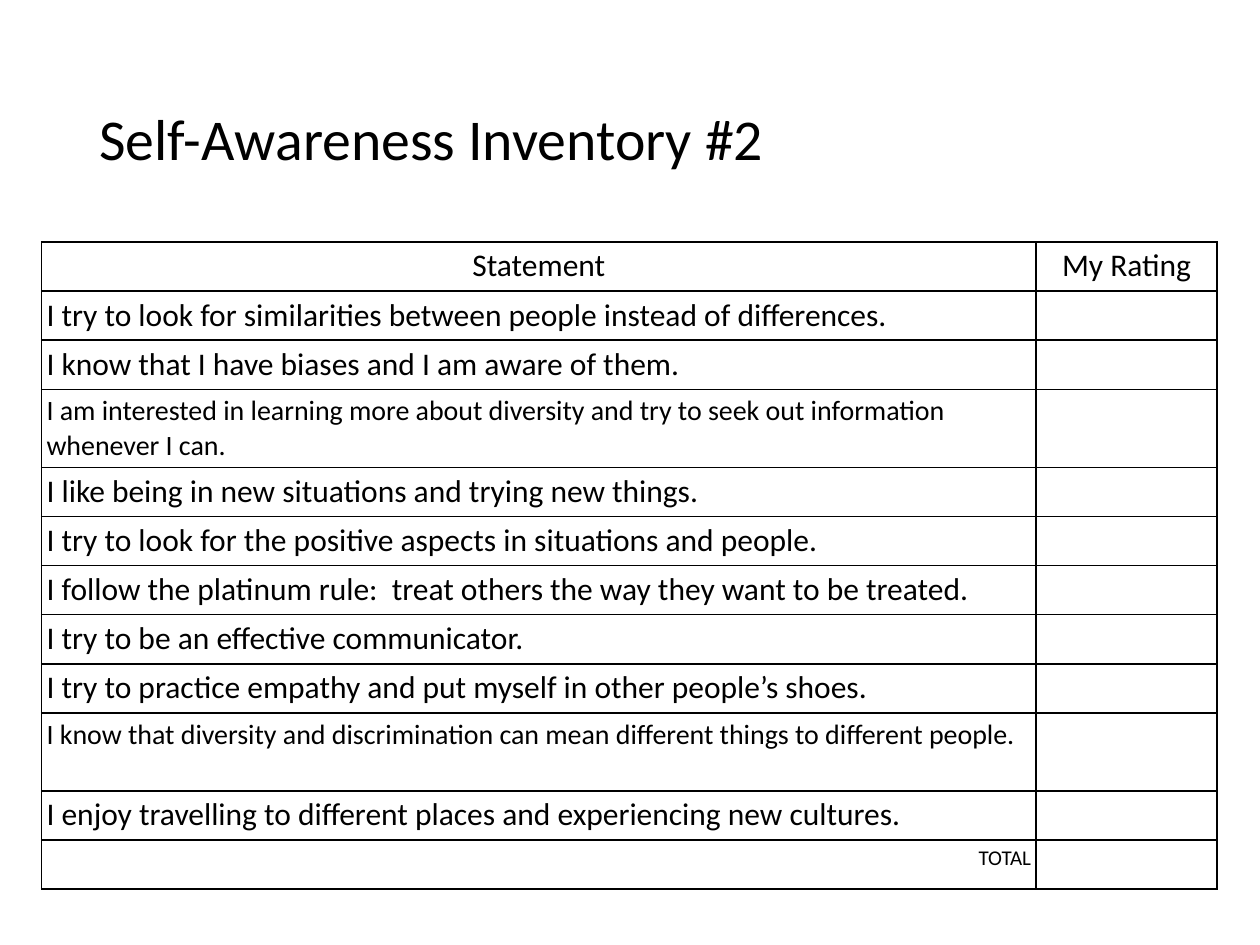
import lxml.etree
import pptx
import pptx.dml.color
import pptx.enum.text
import pptx.oxml.ns
import pptx.util

COLORS = {"ink": "000000", "paper": "FFFFFF"}
FONT = "Calibri"
ALIGN = pptx.enum.text.PP_ALIGN
ANCHOR = pptx.enum.text.MSO_ANCHOR
SLIDE_WIDTH = pptx.util.Inches(10)
SLIDE_HEIGHT = pptx.util.Inches(7.5)
CELL_MARGIN = pptx.util.Inches(0.04)
ROW_HEIGHT, TALL_ROW_HEIGHT = 0.39, 0.62
RATING_SHARE = 0.154

STATEMENTS = [
    ("I try to look for similarities between people instead of differences.", 18),
    ("I know that I have biases and I am aware of them.", 18),
    ("I am interested in learning more about diversity and try to seek out "
     "information whenever I can.", 16),
    ("I like being in new situations and trying new things.", 18),
    ("I try to look for the positive aspects in situations and people.", 18),
    ("I follow the platinum rule:  treat others the way they want to be treated.", 18),
    ("I try to be an effective communicator.", 18),
    ("I try to practice empathy and put myself in other people’s shoes.", 18),
    ("I know that diversity and discrimination can mean different things to "
     "different people.", 16),
    ("I enjoy travelling to different places and experiencing new cultures.", 18),
]


def rgb(name):
    return pptx.dml.color.RGBColor.from_string(COLORS[name])


def write(frame, text, size, align):
    paragraph = frame.paragraphs[0]
    paragraph.text = text
    paragraph.alignment = align
    paragraph.font.size = pptx.util.Pt(size)
    for run in paragraph.runs:
        run.font.name = FONT
        run.font.size = pptx.util.Pt(size)
        run.font.color.rgb = rgb("ink")
    return paragraph


def add_borders(cell):
    properties = cell._tc.get_or_add_tcPr()
    for position, side in enumerate(("lnL", "lnR", "lnT", "lnB")):
        border = lxml.etree.Element(
            pptx.oxml.ns.qn(f"a:{side}"), w=str(pptx.util.Pt(1)))
        fill = lxml.etree.SubElement(border, pptx.oxml.ns.qn("a:solidFill"))
        lxml.etree.SubElement(
            fill, pptx.oxml.ns.qn("a:srgbClr"), val=COLORS["ink"])
        properties.insert(position, border)


def fill_cell(cell, text, size, align):
    cell.margin_left = cell.margin_right = CELL_MARGIN
    cell.margin_top = cell.margin_bottom = CELL_MARGIN
    cell.fill.background()
    write(cell.text_frame, text, size, align)
    add_borders(cell)


def add_title(slide, left, top, width, height):
    title = slide.shapes.add_textbox(left, top, width, height)
    frame = title.text_frame
    frame.word_wrap = True
    frame.vertical_anchor = ANCHOR.MIDDLE
    heading = write(frame, "Self-Awareness Inventory #2", 33, ALIGN.LEFT)
    heading.line_spacing = 0.9


def add_inventory(slide, left, top, width):
    rows = [("Statement", 18, ALIGN.CENTER, "My Rating")]
    rows += [(text, size, ALIGN.LEFT, "") for text, size in STATEMENTS]
    rows.append(("TOTAL", 12, ALIGN.RIGHT, ""))
    heights = [pptx.util.Inches(TALL_ROW_HEIGHT if size == 16 else ROW_HEIGHT)
               for _, size, _, _ in rows]

    inventory = slide.shapes.add_table(
        len(rows), 2, left, top, width, sum(heights)).table
    inventory.first_row = False
    inventory.horz_banding = False
    rating_width = int(width * RATING_SHARE)
    inventory.columns[0].width = width - rating_width
    inventory.columns[1].width = rating_width

    for index, (statement, size, align, rating) in enumerate(rows):
        inventory.rows[index].height = heights[index]
        fill_cell(inventory.cell(index, 0), statement, size, align)
        fill_cell(inventory.cell(index, 1), rating, min(size, 18), ALIGN.CENTER)


def main():
    deck = pptx.Presentation()
    deck.slide_width = SLIDE_WIDTH
    deck.slide_height = SLIDE_HEIGHT
    slide = deck.slides.add_slide(deck.slide_layouts[6])
    slide.background.fill.solid()
    slide.background.fill.fore_color.rgb = rgb("paper")
    add_title(slide, int(SLIDE_WIDTH * 0.069), int(SLIDE_HEIGHT * 0.053),
              int(SLIDE_WIDTH * 0.862), int(SLIDE_HEIGHT * 0.193))
    add_inventory(slide, int(SLIDE_WIDTH * 0.033), int(SLIDE_HEIGHT * 0.256),
                  int(SLIDE_WIDTH * 0.933))
    deck.save("out.pptx")


if __name__ == "__main__":
    main()
